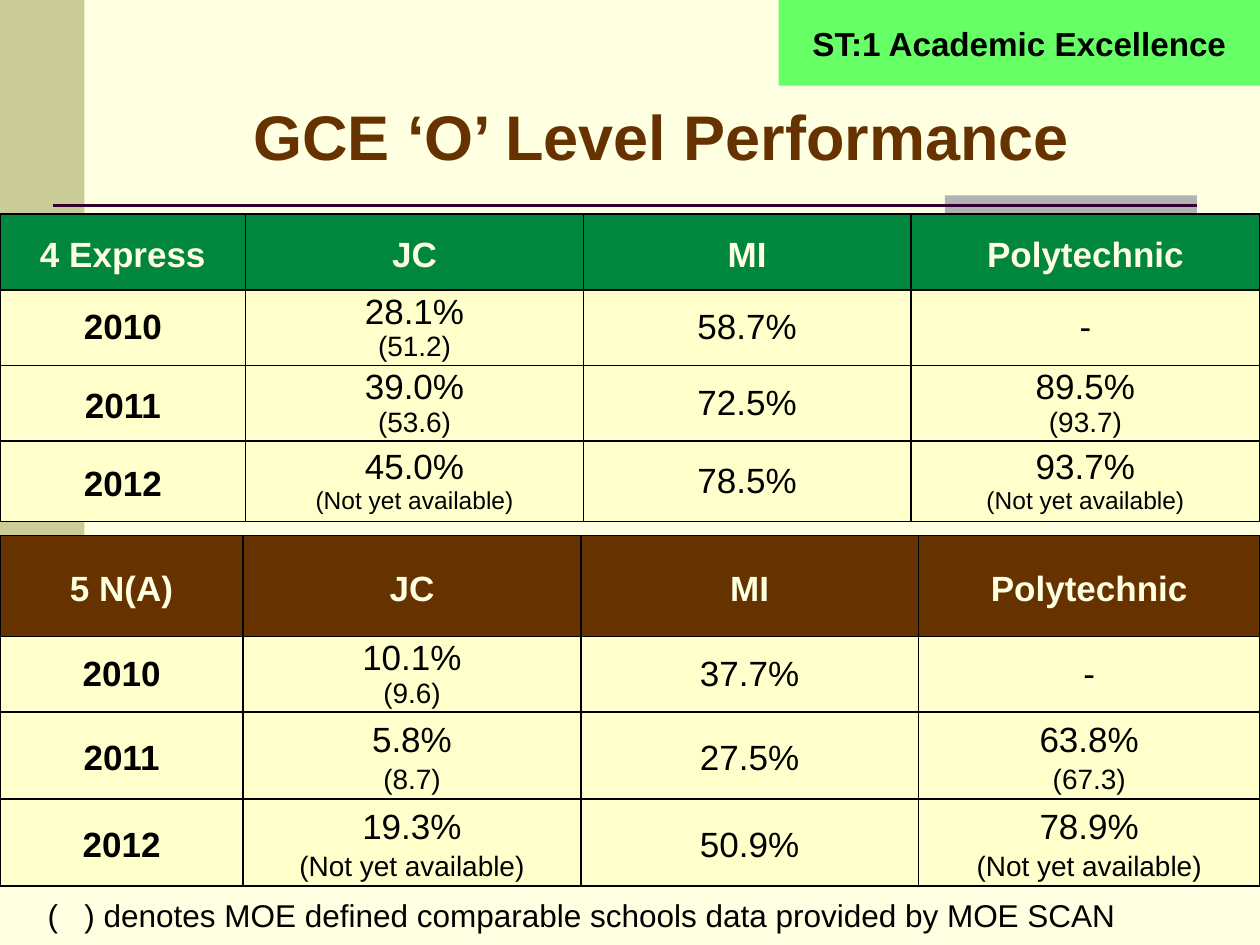
from dataclasses import dataclass

from lxml import etree
from pptx import Presentation, util as u
from pptx.dml.color import RGBColor
from pptx.enum import shapes, text
from pptx.oxml.ns import qn


@dataclass(frozen=True)
class Theme:
    font: str = "Arial"
    background: str = "FFFFE1"
    band: str = "CCCC99"
    accent: str = "B2B2B2"
    rule: str = "330033"
    brown: str = "663300"
    green: str = "00863D"
    badge: str = "66FF66"
    cell: str = "FFFFCC"
    ink: str = "000000"
    title_size: int = 36
    badge_size: int = 19
    body_size: int = 20
    note_size: int = 18
    bracket_size: int = 16
    small_size: int = 14


THEME = Theme()

# Paragraph spacing: line spacing, and points before and after
SINGLE, OPEN, PADDED = (1, 0), (1.15, 0), (1.15, 6)

TITLE = "GCE ‘O’ Level Performance"
BADGE = "ST:1 Academic Excellence"
NOTE = "(   ) denotes MOE defined comparable schools data provided by MOE SCAN"
PENDING = "(Not yet available)"

# Each row: height, year spacing, result spacing, bracket size, cells.
# A cell is a tuple of lines: the result, then its bracketed comparison.
RESULT_TABLES = [
    dict(
        top=1.7, columns=(1.95, 2.68, 2.6, 2.77), header_fill=THEME.green,
        header_height=0.6, header=("4 Express", "JC", "MI", "Polytechnic"),
        rows=[
            (0.56, SINGLE, SINGLE, THEME.bracket_size,
             [("2010",), ("28.1%", "(51.2)"), ("58.7%",), ("-",)]),
            (0.56, PADDED, SINGLE, THEME.bracket_size,
             [("2011",), ("39.0%", "(53.6)"), ("72.5%",), ("89.5%", "(93.7)")]),
            (0.64, PADDED, SINGLE, THEME.small_size,
             [("2012",), ("45.0%", PENDING), ("78.5%",), ("93.7%", PENDING)]),
        ],
    ),
    dict(
        top=4.25, columns=(1.93, 2.68, 2.68, 2.71), header_fill=THEME.brown,
        header_height=0.8, header=("5 N(A)", "JC", "MI", "Polytechnic"),
        rows=[
            (0.56, SINGLE, SINGLE, THEME.bracket_size,
             [("2010",), ("10.1%", "(9.6)"), ("37.7%",), ("-",)]),
            (0.64, OPEN, OPEN, THEME.bracket_size,
             [("2011",), ("5.8%", "(8.7)"), ("27.5%",), ("63.8%", "(67.3)")]),
            (0.64, OPEN, OPEN, THEME.bracket_size,
             [("2012",), ("19.3%", PENDING), ("50.9%",), ("78.9%", PENDING)]),
        ],
    ),
]


def fill_solid(target, color):
    target.fill.solid()
    target.fill.fore_color.rgb = RGBColor.from_string(color)


def write_lines(frame, *lines, sizes, color=THEME.ink, bold=False,
                align=text.PP_ALIGN.CENTER, spacing=SINGLE):
    """Write one paragraph per line, each with its own size."""
    for index, (line, size) in enumerate(zip(lines, sizes)):
        paragraph = frame.add_paragraph() if index else frame.paragraphs[0]
        paragraph.alignment = align
        paragraph.line_spacing, gap = spacing
        paragraph.space_before = paragraph.space_after = u.Pt(gap)
        run = paragraph.add_run()
        run.text = line
        run.font.name = THEME.font
        run.font.size = u.Pt(size)
        run.font.bold = bold
        run.font.color.rgb = RGBColor.from_string(color)


def add_rectangle(slide, box, color):
    shape = slide.shapes.add_shape(shapes.MSO_SHAPE.RECTANGLE, *map(u.Inches, box))
    shape.shadow.inherit = False
    fill_solid(shape, color)
    shape.line.fill.background()
    return shape


def add_rule(slide, left, right, y):
    line = slide.shapes.add_connector(
        shapes.MSO_CONNECTOR.STRAIGHT, *map(u.Inches, (left, y, right, y)))
    line.line.color.rgb = RGBColor.from_string(THEME.rule)
    line.line.width = u.Pt(1.5)
    etree.SubElement(line.element.spPr, qn("a:effectLst"))


def add_text_box(slide, box, line, wrap=True, anchor=text.MSO_ANCHOR.TOP, **style):
    frame = slide.shapes.add_textbox(*map(u.Inches, box)).text_frame
    frame.word_wrap = wrap
    frame.vertical_anchor = anchor
    write_lines(frame, line, **style)


def add_borders(cell):
    properties = cell._tc.get_or_add_tcPr()
    for index, side in enumerate(("lnL", "lnR", "lnT", "lnB")):
        border = etree.Element(qn(f"a:{side}"), w=str(u.Pt(1)))
        fill = etree.SubElement(border, qn("a:solidFill"))
        etree.SubElement(fill, qn("a:srgbClr"), val=THEME.ink)
        properties.insert(index, border)


def format_cell(cell, lines, fill, **style):
    cell.margin_left = cell.margin_right = u.Inches(0.07)
    cell.margin_top = cell.margin_bottom = 0
    cell.vertical_anchor = text.MSO_ANCHOR.MIDDLE
    fill_solid(cell, fill)
    add_borders(cell)
    write_lines(cell.text_frame, *lines, **style)


def add_result_table(slide, top, columns, header_fill, header_height, header, rows):
    heights = [header_height] + [row[0] for row in rows]
    table = slide.shapes.add_table(
        len(heights), len(columns), 0, u.Inches(top),
        u.Inches(sum(columns)), u.Inches(sum(heights))).table
    for column, width in zip(table.columns, columns):
        column.width = u.Inches(width)
    for row, height in zip(table.rows, heights):
        row.height = u.Inches(height)
    for column, label in enumerate(header):
        format_cell(table.cell(0, column), [label], header_fill, bold=True,
                    sizes=[THEME.body_size], color=THEME.background, spacing=PADDED)
    for row, (_, year_spacing, result_spacing, bracket, cells) in enumerate(rows, 1):
        for column, lines in enumerate(cells):
            is_year = column == 0
            format_cell(table.cell(row, column), lines, THEME.cell, bold=is_year,
                        sizes=[THEME.body_size, bracket],
                        spacing=year_spacing if is_year else result_spacing)


def main():
    presentation = Presentation()
    presentation.slide_width, presentation.slide_height = u.Inches(10), u.Inches(7.5)
    slide = presentation.slides.add_slide(presentation.slide_layouts[6])
    fill_solid(slide.background, THEME.background)

    add_rectangle(slide, (0, 0, 0.67, 5.33), THEME.band)
    add_rectangle(slide, (7.5, 1.55, 2, 0.2), THEME.accent)
    add_rule(slide, 0.42, 9.5, 1.63)
    add_text_box(slide, (1, 0.45, 8.5, 1.25), TITLE, anchor=text.MSO_ANCHOR.MIDDLE,
                 sizes=[THEME.title_size], color=THEME.brown, bold=True)

    for result_table in RESULT_TABLES:
        add_result_table(slide, **result_table)

    add_text_box(slide, (0.28, 7.06, 8.69, 0.4), NOTE, wrap=False,
                 sizes=[THEME.note_size], align=text.PP_ALIGN.LEFT)
    badge = add_rectangle(slide, (6.18, 0, 3.82, 0.68), THEME.badge).text_frame
    badge.margin_left = badge.margin_right = u.Inches(0.05)
    badge.vertical_anchor = text.MSO_ANCHOR.MIDDLE
    write_lines(badge, BADGE, sizes=[THEME.badge_size], bold=True)

    presentation.save("out.pptx")


if __name__ == "__main__":
    main()
